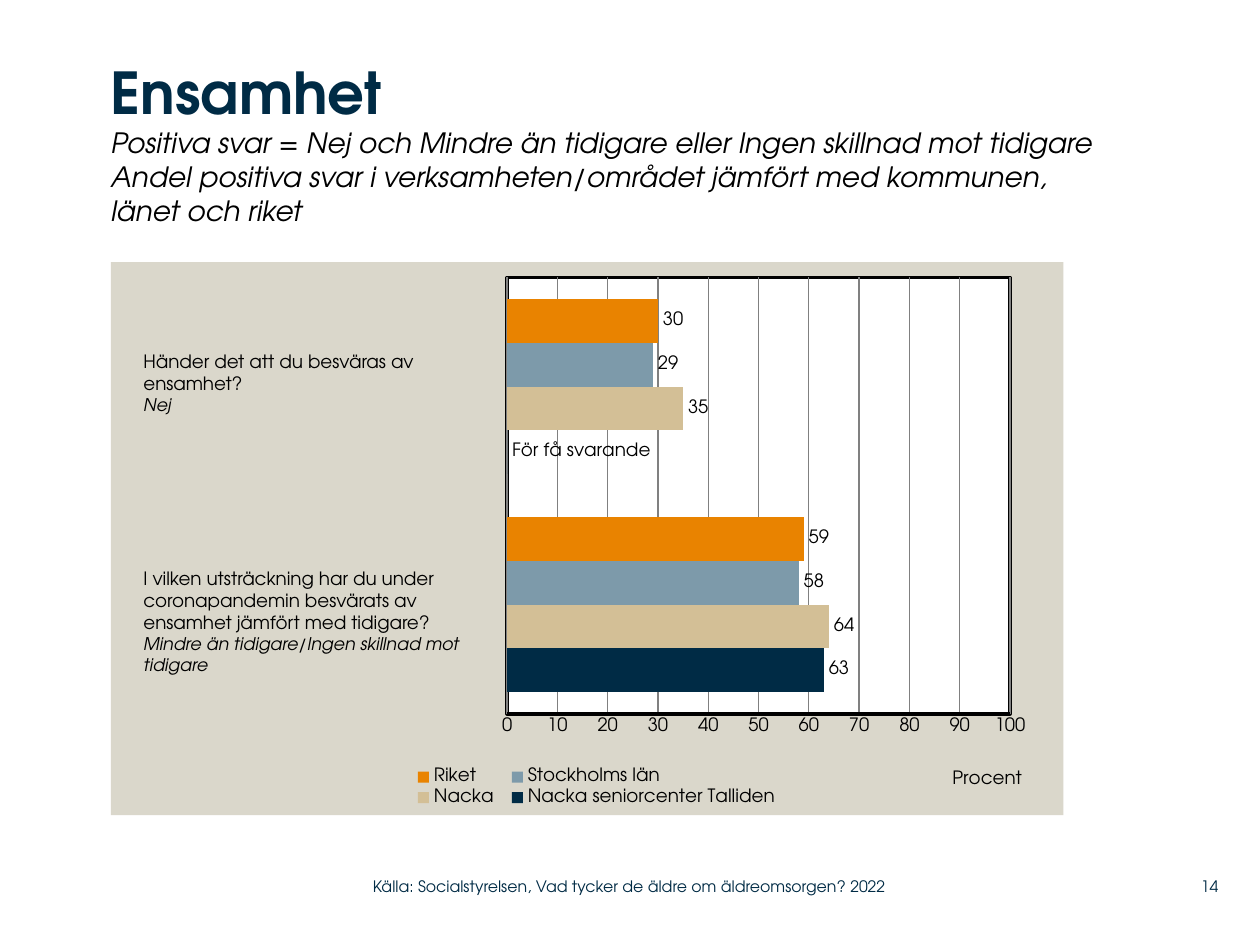
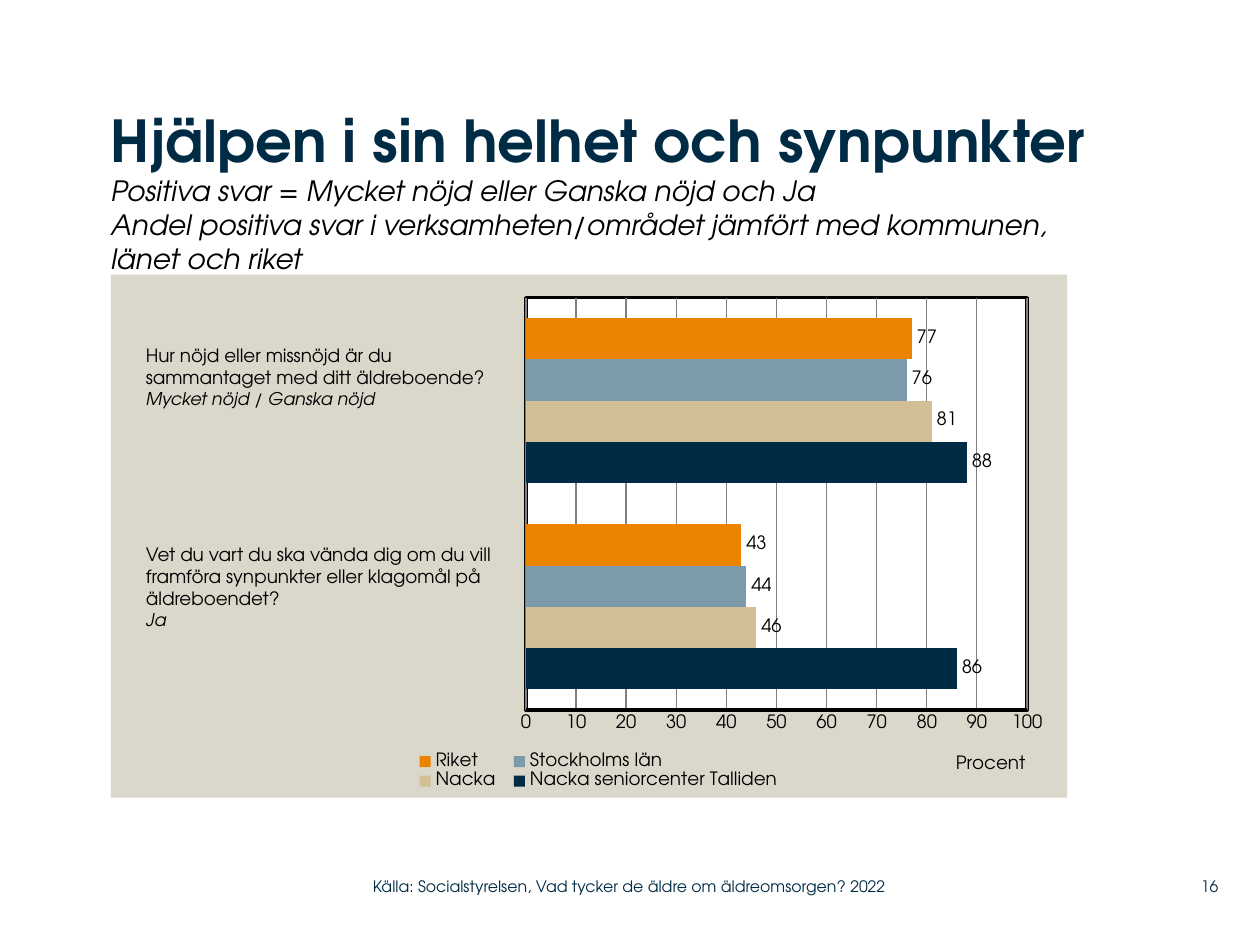
from lxml import etree
from pptx import Presentation
from pptx.chart.data import CategoryChartData
from pptx.dml.color import RGBColor
from pptx.enum.chart import XL_CHART_TYPE as ChartType
from pptx.enum.chart import XL_LABEL_POSITION as LabelPosition
from pptx.enum.chart import XL_LEGEND_POSITION as LegendPosition
from pptx.enum.chart import XL_TICK_MARK as TickMark
from pptx.enum.text import MSO_ANCHOR as Anchor
from pptx.enum.text import MSO_AUTO_SIZE as AutoSize
from pptx.enum.text import PP_ALIGN as Align
from pptx.oxml import parse_xml
from pptx.oxml.ns import nsdecls, qn
from pptx.util import Inches, Pt

FONT = "TeX Gyre Adventor"
NAVY = RGBColor(0x00, 0x2B, 0x45)
SAND = RGBColor(0xD3, 0xBF, 0x96)
STEEL = RGBColor(0x7D, 0x9A, 0xAA)
ORANGE = RGBColor(0xE9, 0x83, 0x00)
PANEL = RGBColor(0xDA, 0xD7, 0xCB)
GRID = RGBColor(0x80, 0x80, 0x80)
WHITE = RGBColor(0xFF, 0xFF, 0xFF)
BLACK = RGBColor(0x00, 0x00, 0x00)

SERIES = [("Nacka seniorcenter Talliden", NAVY), ("Nacka", SAND),
          ("Stockholms län", STEEL), ("Riket", ORANGE)]
COMPARISON = ("Andel positiva svar i verksamheten/området jämfört med kommunen, "
              "länet och riket")
SOURCE = "Källa: Socialstyrelsen, Vad tycker de äldre om äldreomsorgen? 2022"
CHART_SIZE = 10.5


def format_font(font, size, color=BLACK, bold=False, italic=False):
    font.name = FONT
    font.size = Pt(size)
    font.bold = bold
    font.italic = italic
    font.color.rgb = color


def write_line(frame, text, align=Align.LEFT, **style):
    """Fill the empty first paragraph of the frame, or add one after the last."""
    para = frame.paragraphs[-1]
    if para.runs:
        para = frame.add_paragraph()
    para.alignment = align
    span = para.add_run()
    span.text = text
    format_font(span.font, **style)


def remove_insets(frame):
    frame.margin_left = frame.margin_right = 0
    frame.margin_top = frame.margin_bottom = 0


def add_text_box(page, left, top, width, height):
    box = page.shapes.add_textbox(Inches(left), Inches(top), Inches(width), Inches(height))
    box.text_frame.word_wrap = True
    return box.text_frame


def add_title(page, heading, positive_answers, top, height):
    title = page.shapes.title
    title.left, title.top = Inches(0.88), Inches(top)
    title.width, title.height = Inches(7.81), Inches(height)
    frame = title.text_frame
    remove_insets(frame)
    frame.auto_size = AutoSize.NONE
    frame.vertical_anchor = Anchor.TOP
    write_line(frame, heading, size=33, color=NAVY, bold=True)
    for line in (positive_answers, COMPARISON):
        write_line(frame, line, size=16, italic=True)


def add_question(page, lines, answer, left, top, width, height):
    frame = add_text_box(page, left, top, width, height)
    for line in lines:
        write_line(frame, line, size=10.5)
    write_line(frame, answer, size=10, italic=True)


def add_footer(page, number):
    for text, left, width, align in ((SOURCE, 2.96, 4.43, Align.LEFT),
                                     (str(number), 9.2, 0.47, Align.RIGHT)):
        frame = add_text_box(page, left, 6.89, width, 0.29)
        remove_insets(frame)
        frame.vertical_anchor = Anchor.MIDDLE
        write_line(frame, text, align, size=9, color=NAVY)


def set_layout(parent, x, y, width=None, height=None, inner=False):
    """Place a chart part by fractions of the chart's size."""
    for old in parent.findall(qn("c:layout")):
        parent.remove(old)
    layout = parse_xml(f"<c:layout {nsdecls('c')}><c:manualLayout/></c:layout>")
    values = [("layoutTarget", "inner")] if inner else []
    values += [("xMode", "edge"), ("yMode", "edge"), ("x", x), ("y", y)]
    if width:
        values += [("w", width), ("h", height)]
    for name, value in values:
        etree.SubElement(layout[0], qn(f"c:{name}")).set("val", str(value))
    overlay = parent.find(qn("c:overlay"))
    if overlay is None:
        parent.insert(0, layout)
    else:
        overlay.addprevious(layout)


def area_format(fill, line=None):
    """Return the shape properties for a chart's background or plot area."""
    stroke = (f'<a:ln w="{Pt(2)}"><a:solidFill><a:srgbClr val="{line}"/></a:solidFill></a:ln>'
              if line is not None else "<a:ln><a:noFill/></a:ln>")
    return parse_xml(f'<c:spPr {nsdecls("c", "a")}><a:solidFill>'
                     f'<a:srgbClr val="{fill}"/></a:solidFill>{stroke}</c:spPr>')


def format_value_axis(axis):
    axis.minimum_scale, axis.maximum_scale, axis.major_unit = 0, 100, 10
    axis.major_tick_mark = axis.minor_tick_mark = TickMark.NONE
    axis.format.line.color.rgb = BLACK
    axis.format.line.width = Pt(2)
    axis.has_major_gridlines = True
    axis.major_gridlines.format.line.color.rgb = GRID
    axis.major_gridlines.format.line.width = Pt(0.75)
    format_font(axis.tick_labels.font, CHART_SIZE)
    write_line(axis.axis_title.text_frame, "Procent", size=CHART_SIZE)


def format_series(series, color):
    series.format.fill.solid()
    series.format.fill.fore_color.rgb = color
    labels = series.data_labels
    labels.show_value = True
    labels.position = LabelPosition.OUTSIDE_END
    format_font(labels.font, CHART_SIZE)


def add_answer_chart(page, values, plot_layout, top, width, height):
    data = CategoryChartData(number_format="0")
    data.categories = ["1", "2"]
    for (name, _), numbers in zip(SERIES, values):
        data.add_series(name, numbers)
    chart = page.shapes.add_chart(ChartType.BAR_CLUSTERED, Inches(0.88), Inches(top),
                                  Inches(width), Inches(height), data).chart
    chart.has_title = False
    format_font(chart.font, CHART_SIZE)
    plot = chart.plots[0]
    plot.gap_width = 100
    plot.vary_by_categories = False
    for series, (_, color) in zip(plot.series, SERIES):
        format_series(series, color)
    chart.category_axis.visible = False
    format_value_axis(chart.value_axis)
    chart.has_legend = True
    chart.legend.position = LegendPosition.BOTTOM
    chart.legend.include_in_layout = False
    format_font(chart.legend.font, CHART_SIZE)

    root = chart.element.find(qn("c:chart"))
    plot_area = root.find(qn("c:plotArea"))
    set_layout(plot_area, *plot_layout, inner=True)
    set_layout(root.find(qn("c:legend")), 0.31, 0.91, 0.4, 0.08)
    set_layout(chart.value_axis.axis_title.element, 0.88, 0.91)
    plot_area.append(area_format(WHITE, BLACK))
    root.addnext(area_format(PANEL))
    return chart


def label_too_few(chart):
    label = chart.plots[0].series[0].points[1].data_label
    write_line(label.text_frame, "För få svarande", size=CHART_SIZE)
    label.position = LabelPosition.OUTSIDE_END


def add_page(deck):
    return deck.slides.add_slide(deck.slide_layouts[5])


def add_loneliness_page(deck):
    page = add_page(deck)
    add_title(page, "Ensamhet",
              "Positiva svar = Nej och Mindre än tidigare eller Ingen skillnad mot tidigare",
              top=0.45, height=1.64)
    chart = add_answer_chart(page, [(63, 0), (64, 35), (58, 29), (59, 30)],
                             (0.416, 0.028, 0.528, 0.789), top=2.08, width=7.56, height=4.39)
    label_too_few(chart)
    add_question(page, ["I vilken utsträckning har du under coronapandemin besvärats av "
                        "ensamhet jämfört med tidigare?"],
                 "Mindre än tidigare/Ingen skillnad mot tidigare", 1.04, 4.45, 2.94, 0.97)
    add_question(page, ["Händer det att du besväras av", "ensamhet?"], "Nej",
                 1.04, 2.73, 2.94, 0.63)
    add_footer(page, 14)


def add_overall_page(deck):
    page = add_page(deck)
    add_title(page, "Hjälpen i sin helhet och synpunkter",
              "Positiva svar = Mycket nöjd eller Ganska nöjd och Ja", top=0.83, height=1.34)
    add_answer_chart(page, [(86, 88), (46, 81), (44, 76), (43, 77)],
                     (0.434, 0.044, 0.524, 0.789), top=2.18, width=7.59, height=4.15)
    add_question(page, ["Hur nöjd eller missnöjd är du", "sammantaget med ditt äldreboende?"],
                 "Mycket nöjd / Ganska nöjd", 1.06, 2.68, 3.1, 0.81)
    add_question(page, ["Vet du vart du ska vända dig om du vill framföra synpunkter eller "
                        "klagomål på äldreboendet?"], "Ja", 1.06, 4.26, 3.05, 0.81)
    add_footer(page, 16)


def main():
    deck = Presentation()
    deck.slide_width, deck.slide_height = Inches(10), Inches(7.5)
    add_loneliness_page(deck)
    add_overall_page(deck)
    deck.save("out.pptx")


if __name__ == "__main__":
    main()
